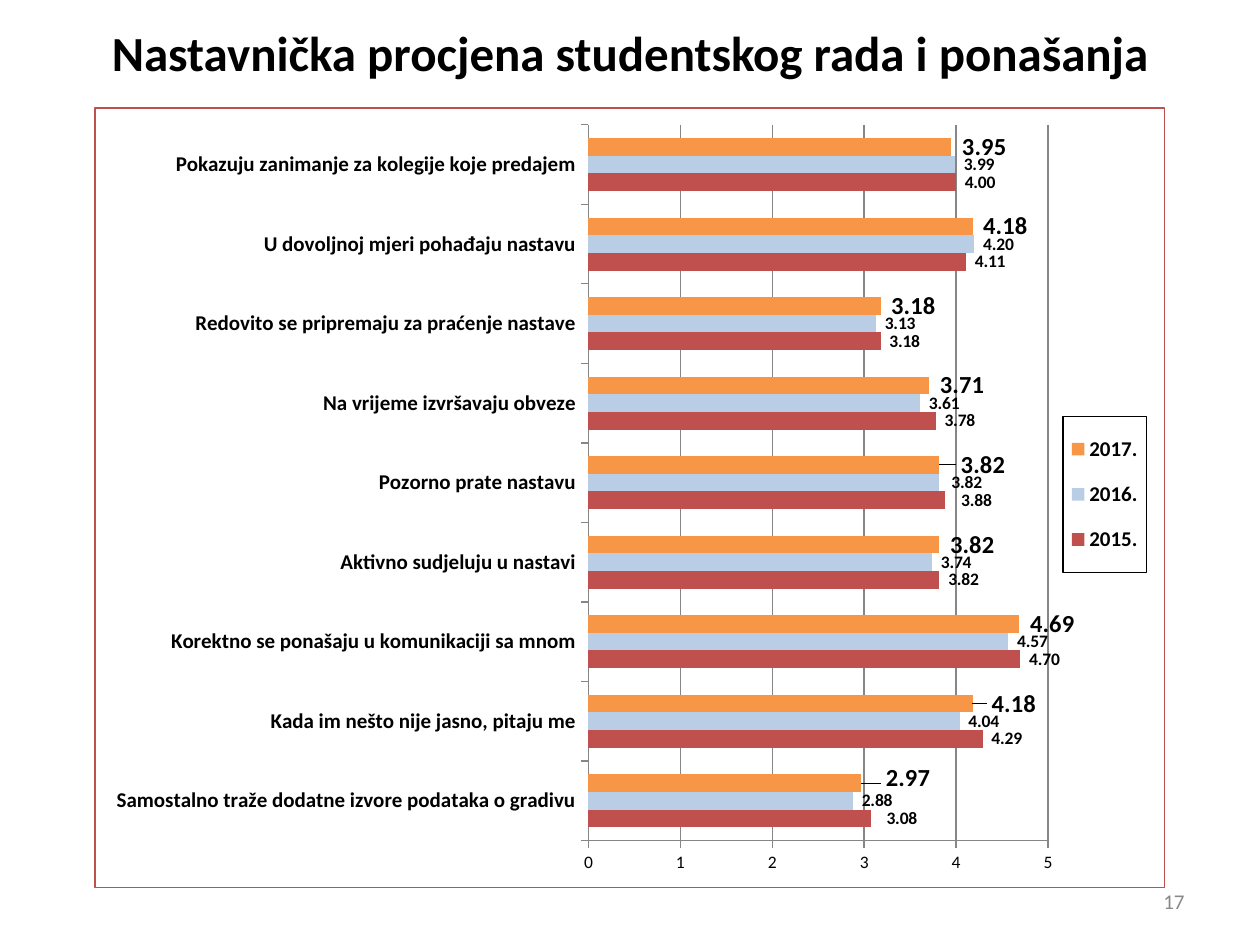
from pptx import Presentation
from pptx.chart.data import CategoryChartData
from pptx.dml.color import RGBColor
from pptx.enum.chart import XL_CHART_TYPE, XL_LABEL_POSITION, XL_LEGEND_POSITION, XL_TICK_MARK
from pptx.enum.shapes import MSO_SHAPE
from pptx.enum.text import MSO_ANCHOR, PP_ALIGN
from pptx.oxml import parse_xml
from pptx.util import Inches, Pt

WIDE, HIGH = Inches(10), Inches(7.5)
NS = ('xmlns:c="http://schemas.openxmlformats.org/drawingml/2006/chart" '
      'xmlns:a="http://schemas.openxmlformats.org/drawingml/2006/main"')
MASK = '_(* #,##0.00_);_(* \\(#,##0.00\\);_(* "-"??_);_(@_)'
CATS = [
    "Samostalno traže dodatne izvore podataka o gradivu",
    "Kada im nešto nije jasno, pitaju me",
    "Korektno se ponašaju u komunikaciji sa mnom",
    "Aktivno sudjeluju u nastavi",
    "Pozorno prate nastavu",
    "Na vrijeme izvršavaju obveze",
    "Redovito se pripremaju za praćenje nastave",
    "U dovoljnoj mjeri pohađaju nastavu",
    "Pokazuju zanimanje za kolegije koje predajem",
]
YEARS = [
    ("2015.", "C0504D", 10, [3.08, 4.29, 4.7, 3.82, 3.88, 3.78, 3.18, 4.11, 4],
     {0: (0.006, 0), 4: (0.007, 0)}),
    ("2016.", "B9CDE5", 10, [2.88, 4.04, 4.57, 3.74, 3.82, 3.61, 3.13, 4.2, 3.99],
     {4: (0.003, 0)}),
    ("2017.", "F79646", 14, [2.97, 4.18, 4.69, 3.82, 3.82, 3.71, 3.18, 4.18, 3.95],
     {0: (0.013, -0.006), 1: (0.008, 0), 4: (0.01, 0)}),
]


def tint(code):
    return RGBColor.from_string(code)


def apply(item, form):
    for key, val in form.items():
        setattr(item, key, val)


def style(font, size, bold=False, code="000000"):
    apply(font, {"size": Pt(size), "bold": bold, "name": "Calibri"})
    font.color.rgb = tint(code)


def stroke(line, code, width=0.75):
    line.color.rgb = tint(code)
    line.width = Pt(width)


def share(left, top, wide, high):
    return [round(n) for n in (left * WIDE, top * HIGH, wide * WIDE, high * HIGH)]


def layout(spots, inner=False):
    target = '<c:layoutTarget val="inner"/>' if inner else ""
    modes = '<c:xMode val="edge"/><c:yMode val="edge"/>' if len(spots) == 4 else ""
    parts = "".join(f'<c:{key} val="{val}"/>' for key, val in zip("xywh", spots))
    return parse_xml(f"<c:layout {NS}><c:manualLayout>{target}{modes}{parts}"
                     "</c:manualLayout></c:layout>")


def edge(code, width, fill):
    return parse_xml(f'<c:spPr {NS}>{fill}<a:ln w="{Pt(width)}"><a:solidFill>'
                     f'<a:srgbClr val="{code}"/></a:solidFill></a:ln></c:spPr>')


def words(shape, text, align, anchor, size, bold, code):
    frame = shape.text_frame
    apply(frame, {"word_wrap": True, "vertical_anchor": anchor})
    para = frame.paragraphs[0]
    para.alignment = align
    run = para.add_run()
    run.text = text
    style(run.font, size, bold, code)


def title(slide, box):
    shape = slide.shapes.add_shape(MSO_SHAPE.RECTANGLE, *box)
    shape.shadow.inherit = False
    shape.fill.solid()
    shape.fill.fore_color.rgb = tint("FFFFFF")
    shape.line.fill.background()
    words(shape, "Nastavnička procjena studentskog rada i ponašanja",
          PP_ALIGN.CENTER, MSO_ANCHOR.TOP, 28, True, "000000")


def number(slide, box):
    words(slide.shapes.add_textbox(*box), "17", PP_ALIGN.RIGHT,
          MSO_ANCHOR.MIDDLE, 12, False, "898989")


def paint(bars, code, size, moves):
    bars.format.fill.solid()
    bars.format.fill.fore_color.rgb = tint(code)
    bars.invert_if_negative = False
    tags = bars.data_labels
    apply(tags, {"show_value": True, "number_format": MASK,
                 "number_format_is_linked": False,
                 "position": XL_LABEL_POSITION.OUTSIDE_END})
    style(tags.font, size, True)
    for spot, move in moves.items():
        tag = bars.points[spot].data_label
        style(tag.font, size, True)
        tag.position = XL_LABEL_POSITION.OUTSIDE_END
    root = tags._element
    for node, move in zip(root.findall("{*}dLbl"), moves.values()):
        node.insert(1, layout(move))
        form = parse_xml(f'<c:numFmt {NS} sourceLinked="0"/>')
        form.set("formatCode", MASK)
        node.insert(2, form)


def axes(chart):
    cat, val = chart.category_axis, chart.value_axis
    for axis, size, bold in ((cat, 12, True), (val, 10, False)):
        apply(axis, {"major_tick_mark": XL_TICK_MARK.OUTSIDE,
                     "minor_tick_mark": XL_TICK_MARK.NONE})
        style(axis.tick_labels.font, size, bold)
        stroke(axis.format.line, "868686")
    apply(val, {"minimum_scale": 0, "maximum_scale": 5, "major_unit": 1,
                "has_major_gridlines": True})
    apply(val.tick_labels, {"number_format": "#,##0", "number_format_is_linked": False})
    stroke(val.major_gridlines.format.line, "868686")


def legend(chart):
    chart.has_legend = True
    key = chart.legend
    apply(key, {"position": XL_LEGEND_POSITION.RIGHT, "include_in_layout": False})
    style(key.font, 12, True)
    root = key._element
    for old in root.findall("{*}layout"):
        root.remove(old)
    root.find("{*}legendPos").addnext(layout((0.905, 0.396, 0.078, 0.2)))
    root.find("{*}overlay").addnext(edge("000000", 0.75, "<a:noFill/>"))


def graph(slide, box):
    data = CategoryChartData()
    data.categories = CATS
    for name, code, size, vals, moves in YEARS:
        data.add_series(name, vals)
    chart = slide.shapes.add_chart(XL_CHART_TYPE.BAR_CLUSTERED, *box, data).chart
    chart.has_title = False
    style(chart.font, 10)
    plot = chart.plots[0]
    apply(plot, {"gap_width": 150, "overlap": 0, "vary_by_categories": False})
    for bars, (name, code, size, vals, moves) in zip(plot.series, YEARS):
        paint(bars, code, size, moves)
    axes(chart)
    legend(chart)
    root = chart._chartSpace.find("{*}chart")
    area = root.find("{*}plotArea")
    for old in area.findall("{*}layout"):
        area.remove(old)
    area.insert(0, layout((0.461, 0.022, 0.43, 0.918), True))
    white = '<a:solidFill><a:srgbClr val="FFFFFF"/></a:solidFill>'
    root.addnext(edge("C0504D", 1, white))


def main():
    deck = Presentation()
    apply(deck, {"slide_width": WIDE, "slide_height": HIGH})
    slide = deck.slides.add_slide(deck.slide_layouts[6])
    title(slide, share(0.035, 0.017, 0.93, 0.076))
    number(slide, share(0.717, 0.927, 0.233, 0.053))
    graph(slide, share(0.075, 0.113, 0.85, 0.827))
    deck.save("out.pptx")


if __name__ == "__main__":
    main()
